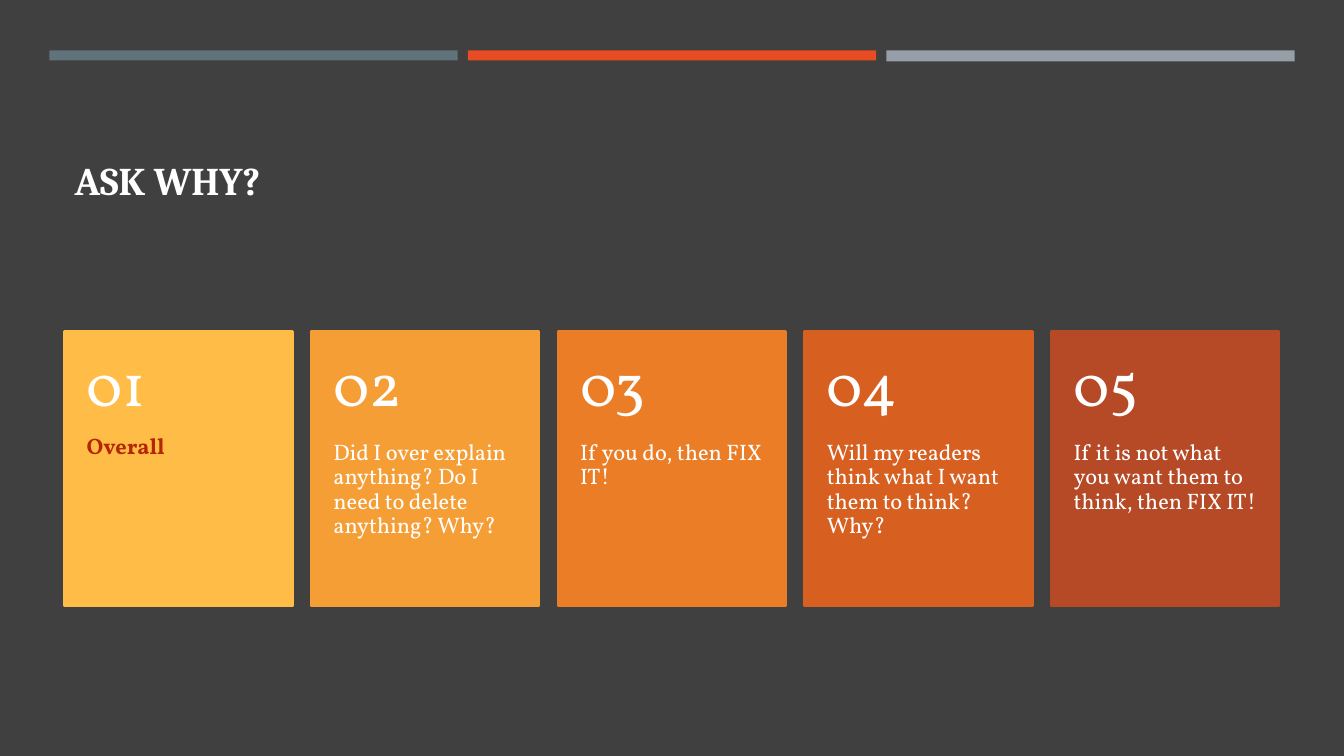
import pptx
import pptx.dml.color
import pptx.enum.shapes
import pptx.enum.text
import pptx.util

Inches = pptx.util.Inches
Pt = pptx.util.Pt
ANCHOR = pptx.enum.text.MSO_ANCHOR

COLORS = {
    "background": "404040",
    "white": "FFFFFF",
    "red": "B22600",
    "slate": "60727A",
    "vermilion": "E84C22",
    "silver": "969FA7",
    "amber": "FFBD47",
    "apricot": "F69E36",
    "orange": "EB7D26",
    "rust": "D75F20",
    "brick": "B64926",
}
TITLE = "ASK WHY?"
BANDS = [("slate", 0.1), ("vermilion", 0.1), ("silver", 0.11)]
CARDS = [
    ("Overall", "amber", "red", True),
    ("Did I over explain anything? Do I need to delete anything? Why?", "apricot", "white", False),
    ("If you do, then FIX IT!", "orange", "white", False),
    ("Will my readers think what I want them to think? Why?", "rust", "white", False),
    ("If it is not what you want them to think, then FIX IT!", "brick", "white", False),
]

BAND_LEFT, BAND_TOP, BAND_WIDTH, BAND_STEP = 0.49, 0.5, 4.05, 4.15
CARD_LEFT, CARD_TOP, CARD_WIDTH, CARD_HEIGHT = 0.64, 3.29, 2.26, 2.72
CARD_STEP = 2.447
NUMBER_HEIGHT = 1.09


def color(name):
    return pptx.dml.color.RGBColor.from_string(COLORS[name])


def add_block(shapes, left, top, width, height, fill):
    block = shapes.add_shape(
        pptx.enum.shapes.MSO_SHAPE.RECTANGLE,
        Inches(left), Inches(top), Inches(width), Inches(height),
    )
    block.shadow.inherit = False
    block.fill.solid()
    block.fill.fore_color.rgb = color(fill)
    block.line.fill.background()
    return block


def add_label(shapes, text, left, top, height, size, ink, bold, anchor, inset_top, inset_bottom):
    label = shapes.add_textbox(Inches(left), Inches(top), Inches(CARD_WIDTH), Inches(height))
    frame = label.text_frame
    frame.word_wrap = True
    frame.vertical_anchor = anchor
    frame.margin_left = frame.margin_right = Inches(0.22)
    frame.margin_top, frame.margin_bottom = Inches(inset_top), Inches(inset_bottom)
    paragraph = frame.paragraphs[0]
    paragraph.text = text
    paragraph.line_spacing = 0.9
    paragraph.font.name = "Vollkorn"
    paragraph.font.size = Pt(size)
    paragraph.font.bold = bold
    paragraph.font.color.rgb = color(ink)


def add_title(slide):
    title = slide.shapes.title
    title.left, title.top = Inches(0.64), Inches(0.77)
    title.width, title.height = Inches(12.06), Inches(1.3)
    frame = title.text_frame
    frame.auto_size = pptx.enum.text.MSO_AUTO_SIZE.NONE
    frame.vertical_anchor = ANCHOR.BOTTOM
    paragraph = frame.paragraphs[0]
    paragraph.text = TITLE
    paragraph.alignment = pptx.enum.text.PP_ALIGN.LEFT
    paragraph.font.name = "Cambria"
    paragraph.font.size = Pt(28)
    paragraph.font.bold = True
    paragraph.font.color.rgb = color("white")


def add_card(slide, index, question, fill, ink, bold):
    left = CARD_LEFT + index * CARD_STEP
    shapes = slide.shapes.add_group_shape().shapes
    card = add_block(shapes, left, CARD_TOP, CARD_WIDTH, CARD_HEIGHT, fill)
    card.line.color.rgb = color(fill)
    card.line.width = Pt(1.75)
    add_label(shapes, question, left, CARD_TOP + NUMBER_HEIGHT, CARD_HEIGHT - NUMBER_HEIGHT,
              16, ink, bold, ANCHOR.TOP, 0, 0.36)
    add_label(shapes, f"{index + 1:02d}", left, CARD_TOP, NUMBER_HEIGHT,
              43, "white", False, ANCHOR.MIDDLE, 0.18, 0.18)


def main():
    deck = pptx.Presentation()
    deck.slide_width, deck.slide_height = Inches(13.33), Inches(7.5)
    slide = deck.slides.add_slide(deck.slide_layouts[5])
    slide.background.fill.solid()
    slide.background.fill.fore_color.rgb = color("background")
    add_title(slide)
    for index, (fill, height) in enumerate(BANDS):
        add_block(slide.shapes, BAND_LEFT + index * BAND_STEP, BAND_TOP, BAND_WIDTH, height, fill)
    for index, card in enumerate(CARDS):
        add_card(slide, index, *card)
    deck.save("out.pptx")


if __name__ == "__main__":
    main()
